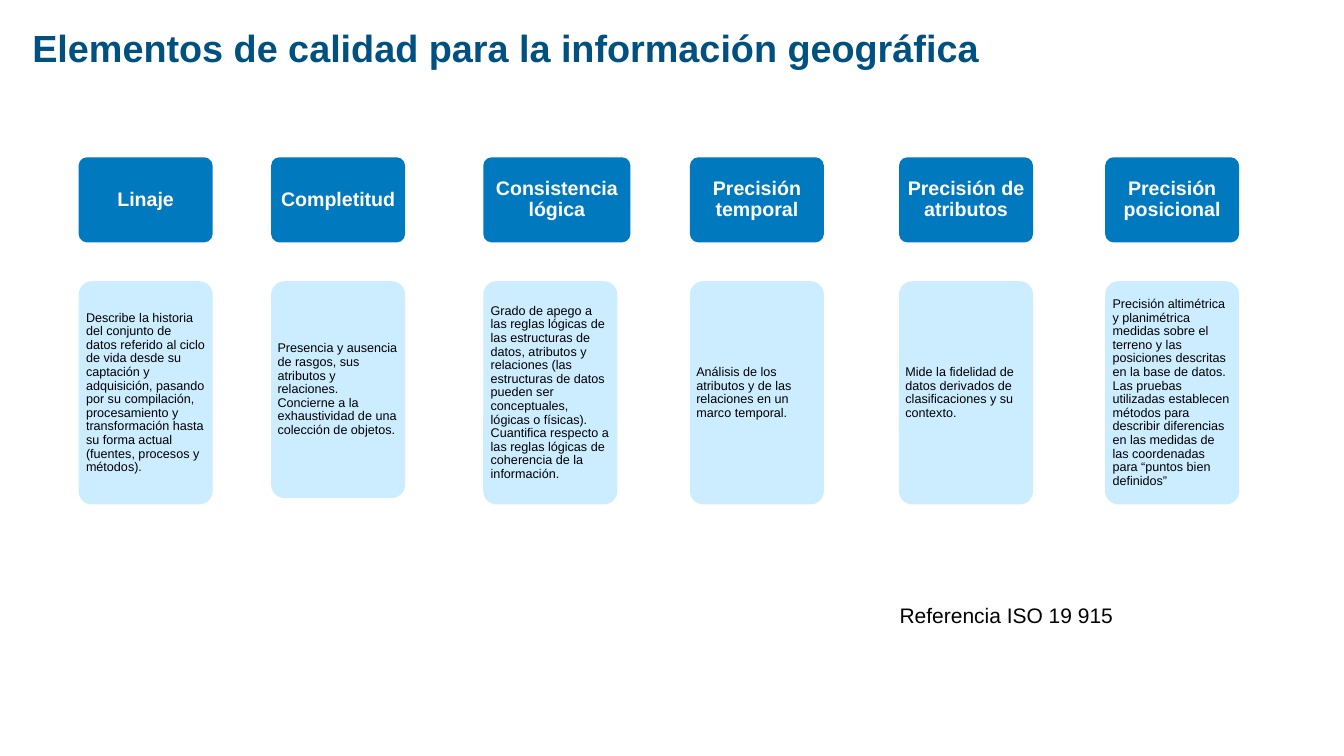
import dataclasses

import pptx
import pptx.dml.color
import pptx.enum.shapes
import pptx.enum.text
import pptx.util

Inches = pptx.util.Inches
Pt = pptx.util.Pt
RGB = pptx.dml.color.RGBColor
Align = pptx.enum.text.PP_ALIGN
Anchor = pptx.enum.text.MSO_ANCHOR

NAVY = RGB(0x00, 0x51, 0x80)
BLUE = RGB(0x00, 0x79, 0xBF)
PALE = RGB(0xCC, 0xEC, 0xFF)
WHITE = RGB(0xFF, 0xFF, 0xFF)
BLACK = RGB(0x00, 0x00, 0x00)

HEAD_TOP, HEAD_HIGH = 3.12, 1.69
CARD_TOP = 5.58
WIDE = 2.66


@dataclasses.dataclass
class Column:
    left: float
    head: str
    body: str
    wide: float = WIDE  # heading width
    high: float = 4.43  # card height
    pad: float = 0.07  # card side margin


@dataclasses.dataclass
class Style:
    fill: RGB
    ink: RGB
    size: int
    bold: bool
    align: Align


HEAD = Style(BLUE, WHITE, 28, True, Align.CENTER)
CARD = Style(PALE, BLACK, 18, False, Align.LEFT)

COLUMNS = [
    Column(1.56, "Linaje",
           "Describe la historia del conjunto de datos referido al ciclo de "
           "vida desde su captación y adquisición, pasando por su "
           "compilación, procesamiento y transformación hasta su forma "
           "actual (fuentes, procesos y métodos)."),
    Column(5.38, "Completitud",
           "Presencia y ausencia de rasgos, sus atributos y relaciones. "
           "Concierne a la exhaustividad de una colección de objetos.",
           high=4.3, pad=0.05),
    Column(9.59, "Consistencia lógica",
           "Grado de apego a las reglas lógicas de las estructuras de datos, "
           "atributos y relaciones (las estructuras de datos pueden ser "
           "conceptuales, lógicas o físicas). Cuantifica respecto a las "
           "reglas lógicas de coherencia de la información.",
           wide=2.92),
    Column(13.69, "Precisión temporal",
           "Análisis de los atributos y de las relaciones en un marco "
           "temporal.", pad=0.05),
    Column(17.84, "Precisión de atributos",
           "Mide la fidelidad de datos derivados de clasificaciones y su "
           "contexto.", pad=0.05),
    Column(21.93, "Precisión posicional",
           "Precisión altimétrica y planimétrica medidas sobre el terreno y "
           "las posiciones descritas en la base de datos. Las pruebas "
           "utilizadas establecen métodos para describir diferencias en las "
           "medidas de las coordenadas para “puntos bien definidos”"),
]


def write(shape, text: str, size: int, ink: RGB, bold: bool, align: Align):
    """Fill a shape with one formatted paragraph."""
    frame = shape.text_frame
    frame.text = text
    frame.word_wrap = True
    frame.vertical_anchor = Anchor.MIDDLE
    para = frame.paragraphs[0]
    para.alignment = align
    para.font.name = "Arial"
    para.font.size = Pt(size)
    para.font.bold = bold
    para.font.color.rgb = ink
    return frame


def inset(frame, pad: float) -> None:
    frame.margin_left = frame.margin_right = Inches(pad)
    frame.margin_top = frame.margin_bottom = Inches(pad)


def box(slide, left: float, top: float, wide: float, high: float,
        text: str, style: Style, pad: float) -> None:
    """Draw a rounded box with its text."""
    shape = slide.shapes.add_shape(
        pptx.enum.shapes.MSO_SHAPE.ROUNDED_RECTANGLE,
        Inches(left), Inches(top), Inches(wide), Inches(high))
    shape.adjustments[0] = 0.1
    shape.shadow.inherit = False
    shape.fill.solid()
    shape.fill.fore_color.rgb = style.fill
    shape.line.fill.background()
    frame = write(shape, text, style.size, style.ink, style.bold, style.align)
    inset(frame, pad)
    frame.paragraphs[0].line_spacing = 0.9


def main() -> None:
    deck = pptx.Presentation()
    deck.slide_width, deck.slide_height = Inches(26.67), Inches(15)
    slide = deck.slides.add_slide(deck.slide_layouts[5])

    # Title
    title = slide.shapes.title
    title.left, title.top = Inches(0.54), Inches(0.43)
    title.width, title.height = Inches(20.48), Inches(1.01)
    frame = write(title, "Elementos de calidad para la información geográfica",
                  54, NAVY, True, Align.LEFT)
    frame.auto_size = pptx.enum.text.MSO_AUTO_SIZE.NONE

    # Quality elements: heading above, description below
    for col in COLUMNS:
        box(slide, col.left, HEAD_TOP, col.wide, HEAD_HIGH,
            col.head, HEAD, 0.12)
        box(slide, col.left, CARD_TOP, WIDE, col.high,
            col.body, CARD, col.pad)

    # Reference
    note = slide.shapes.add_textbox(
        Inches(17.59), Inches(11.89), Inches(4.76), Inches(0.62))
    frame = write(note, "Referencia ISO 19 915", 30, BLACK, False,
                  Align.CENTER)
    inset(frame, 0.06)

    deck.save("out.pptx")


if __name__ == "__main__":
    main()
